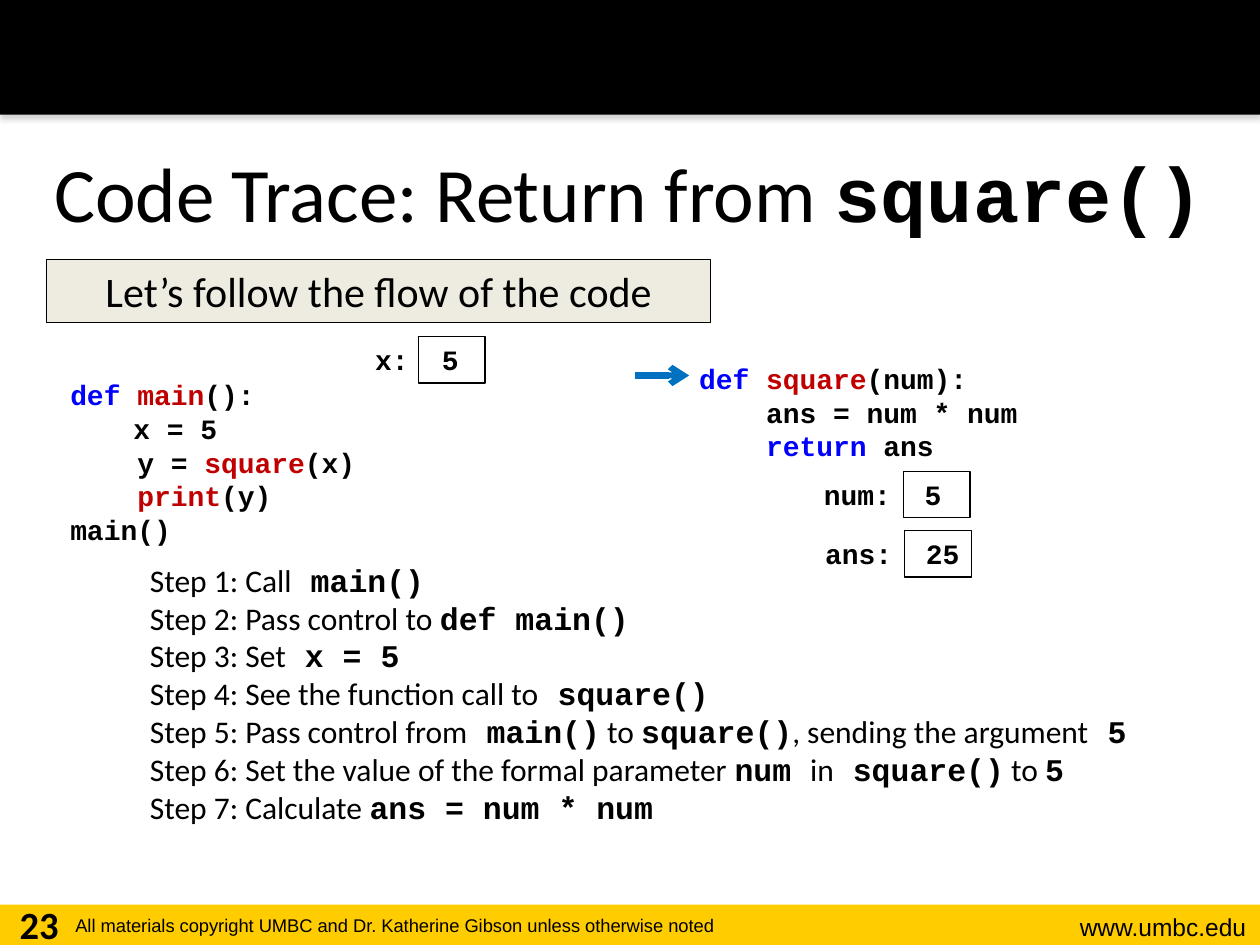
from itertools import cycle

from lxml import etree
from pptx import Presentation
from pptx.dml import color
from pptx.enum import shapes, text
from pptx.oxml import ns, parse_xml

from pptx.util import Inches, Pt

HUES = {
    "black": "000000",
    "gold": "FFCC00",
    "cream": "EEECE1",
    "key": "0000FF",
    "name": "C00000",
    "arrow": "0070C0",
}
SANS, BODY, CODE = "Arial", "Calibri", "Courier New"
ALIGN = {"l": text.PP_ALIGN.LEFT, "c": text.PP_ALIGN.CENTER, "r": text.PP_ALIGN.RIGHT}
SHADE = (
    f'<a:effectLst {ns.nsdecls("a")}><a:outerShdw blurRad="39370" dist="22860" dir="5400000">'
    '<a:srgbClr val="808080"><a:alpha val="35000"/></a:srgbClr></a:outerShdw></a:effectLst>'
)
MAIN = [
    [("def ", "key"), ("main", "name"), ("():", "black")],
    [("\tx = 5", "black")],
    [("    y = ", "black"), ("square", "name"), ("(x)", "black")],
    [("    ", "black"), ("print", "name"), ("(y)", "black")],
    [("main()", "black")],
]
SQUARE = [
    [("def ", "key"), ("square", "name"), ("(num):", "black")],
    [("    ans = num * num", "black")],
    [("    return ", "key"), ("ans", "black")],
]
STEPS = [
    "Step 1: Call| main()",
    "Step 2: Pass control to |def main()",
    "Step 3: Set| x = 5",
    "Step 4: See the function call to| square()",
    "Step 5: Pass control from| main()| to |square()|, sending the argument| 5",
    "Step 6: Set the value of the formal parameter |num |in| square()| to |5",
    "Step 7: Calculate |ans = num * num",
]


def rgb(hue):
    return color.RGBColor.from_string(HUES[hue])


def write(frame, lines, size, font=BODY, bold=False, align="l", tab=None, plain=False):
    for i, line in enumerate(lines):
        para = frame.paragraphs[0] if i == 0 else frame.add_paragraph()
        props = para._p.get_or_add_pPr()
        if plain:
            props.set("marL", "0")
            props.set("indent", "0")
            etree.SubElement(props, ns.qn("a:buNone"))
        if tab:
            stops = etree.SubElement(props, ns.qn("a:tabLst"))
            etree.SubElement(stops, ns.qn("a:tab"), pos=str(Inches(tab)), algn="l")
        para.alignment = ALIGN[align]
        para.space_before = Pt(0)
        for words, hue, *face in [(line, "black")] if isinstance(line, str) else line:
            run = para.add_run()
            run.text = words
            run.font.size = Pt(size)
            run.font.name = face[0] if face else font
            run.font.bold = face[0] == CODE if face else bold
            run.font.color.rgb = rgb(hue)


def mix(line):
    return [(part, "black", face) for part, face in zip(line.split("|"), cycle((BODY, CODE)))]


class Deck:
    def __init__(self):
        self.prs = Presentation()
        self.prs.slide_width, self.prs.slide_height = Inches(10), Inches(7.5)
        self.slide = self.prs.slides.add_slide(self.prs.slide_layouts[1])

    def holder(self, index, at, lines, size, wrap=True, **style):
        shape = self.slide.placeholders[index]
        shape.left, shape.top, shape.width, shape.height = map(Inches, at)
        frame = shape.text_frame
        frame.auto_size = text.MSO_AUTO_SIZE.NONE
        frame.word_wrap = wrap
        write(frame, lines, size, **style)

    def label(self, at, lines, size, **style):
        frame = self.slide.shapes.add_textbox(*map(Inches, at)).text_frame
        frame.word_wrap = True
        write(frame, lines, size, **style)

    def box(self, at, fill=None, line=None):
        shape = self.slide.shapes.add_shape(shapes.MSO_SHAPE.RECTANGLE, *map(Inches, at))
        shape.shadow.inherit = False
        if fill:
            shape.fill.solid()
            shape.fill.fore_color.rgb = rgb(fill)
        else:
            shape.fill.background()
        if line:
            shape.line.color.rgb = rgb(line)
            shape.line.width = Pt(0.75)
        else:
            shape.line.fill.background()
        return shape

    def shade(self, shape):
        props = shape._element.spPr
        props.replace(props.find(ns.qn("a:effectLst")), parse_xml(SHADE))

    def arrow(self, x, y, end):
        link = self.slide.shapes.add_connector(
            shapes.MSO_CONNECTOR.STRAIGHT, Inches(x), Inches(y), Inches(end), Inches(y)
        )
        link.line.color.rgb = rgb("arrow")
        link.line.width = Pt(3.5)
        etree.SubElement(link.line._get_or_add_ln(), ns.qn("a:tailEnd"), type="arrow")
        etree.SubElement(link._element.spPr, ns.qn("a:effectLst"))

    def cell(self, name, value, x, y, edge):
        tab = round((len(name) + 2) * 0.1333, 2)
        self.label((x, y, 2.1, 0.37), [f"{name}\t{value}"], 16, font=CODE, bold=True, tab=tab)
        self.box((edge, y, 0.53, 0.37), line="black")


def main():
    deck = Deck()
    deck.box((0, 7.18, 10, 0.32), "gold")
    deck.shade(deck.box((0, 0, 10, 0.91), "black"))
    deck.label((8, 7.19, 1.99, 0.34), ["www.umbc.edu"], 14, font=SANS, align="r")
    note = "All materials copyright UMBC and Dr. Katherine Gibson unless otherwise noted"
    deck.label((0.5, 7.21, 6.56, 0.29), [note], 10.5, font=SANS)
    deck.label((0, 7.1, 0.62, 0.4), ["23"], 22, bold=True, align="c")

    title = mix("Code Trace: Return from |square()")
    deck.holder(0, (0.3, 0.9, 9.39, 1.25), [title], 44, align="c")
    deck.holder(1, (1.09, 4.4, 8.08, 2.22), map(mix, STEPS), 18, wrap=False, plain=True)

    deck.label((0.46, 2.95, 2.8, 1.45), MAIN, 16, font=CODE, bold=True, tab=0.5)
    deck.label((5.45, 2.82, 4.44, 0.91), SQUARE, 16, font=CODE, bold=True)
    banner = deck.box((0.37, 2.06, 5.27, 0.5), "cream", "black")
    write(banner.text_frame, ["Let’s follow the flow of the code"], 24, align="c")
    deck.arrow(5.04, 2.98, 5.47)

    deck.cell("num:", 5, 6.44, 3.74, 7.17)
    deck.cell("x:", 5, 2.88, 2.67, 3.32)
    deck.cell("ans:", 25, 6.45, 4.21, 7.18)
    deck.prs.save("out.pptx")


if __name__ == "__main__":
    main()
